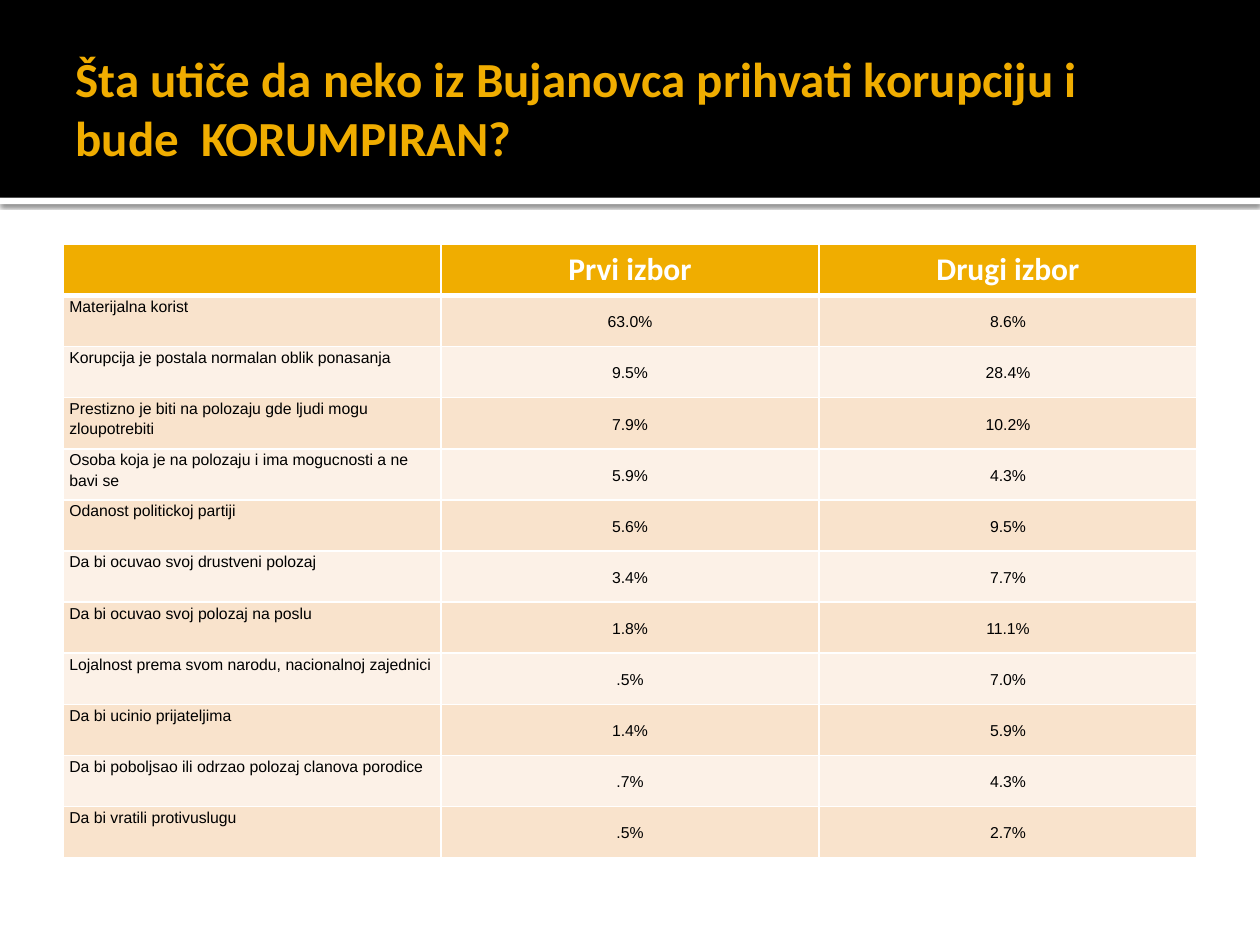
from lxml.etree import SubElement
from pptx import Presentation
from pptx.dml.color import RGBColor
from pptx.enum.shapes import MSO_SHAPE
from pptx.enum.text import MSO_ANCHOR, PP_ALIGN
from pptx.oxml.ns import qn
from pptx.util import Inches, Pt

COLORS = {
    "black": "000000",
    "white": "FFFFFF",
    "gold": "F0AD00",
    "dark_row": "F9E3CC",
    "light_row": "FCF1E7",
}

TITLE = "Šta utiče da neko iz Bujanovca prihvati korupciju i bude  KORUMPIRAN?"
HEADER = ("", "Prvi izbor", "Drugi izbor")
REASONS = [
    ("Materijalna korist", "63.0%", "8.6%"),
    ("Korupcija je postala normalan oblik ponasanja", "9.5%", "28.4%"),
    ("Prestizno je biti na polozaju gde ljudi mogu zloupotrebiti", "7.9%", "10.2%"),
    ("Osoba koja je na polozaju i ima mogucnosti a ne bavi se", "5.9%", "4.3%"),
    ("Odanost politickoj partiji", "5.6%", "9.5%"),
    ("Da bi ocuvao svoj drustveni polozaj", "3.4%", "7.7%"),
    ("Da bi ocuvao svoj polozaj na poslu", "1.8%", "11.1%"),
    ("Lojalnost prema svom narodu, nacionalnoj zajednici", ".5%", "7.0%"),
    ("Da bi ucinio prijateljima", "1.4%", "5.9%"),
    ("Da bi poboljsao ili odrzao polozaj clanova porodice", ".7%", "4.3%"),
    ("Da bi vratili protivuslugu", ".5%", "2.7%"),
]


def rgb(name):
    return RGBColor.from_string(COLORS[name])


class SlideBuilder:
    def __init__(self, slide, heading_font, body_font):
        self.slide = slide
        self.heading_font = heading_font
        self.body_font = body_font

    def style(self, paragraph, font_name, size, color, bold=False):
        font = paragraph.font
        font.name, font.size, font.bold = font_name, Pt(size), bold
        font.color.rgb = rgb(color)

    def band(self, top, height, color):
        """Add a full-width strip without outline or shadow."""
        strip = self.slide.shapes.add_shape(
            MSO_SHAPE.RECTANGLE, 0, Inches(top), Inches(10), Inches(height))
        strip.fill.solid()
        strip.fill.fore_color.rgb = rgb(color)
        strip.line.fill.background()
        strip.shadow.inherit = False
        return strip

    def drop_shadow(self, strip):
        effects = strip.element.spPr.find(qn("a:effectLst"))
        shadow = SubElement(effects, qn("a:outerShdw"), blurRad=str(Pt(2.5)),
                            dist=str(Pt(0.8)), dir="5400000", rotWithShape="0")
        tint = SubElement(shadow, qn("a:srgbClr"), val=COLORS["black"])
        SubElement(tint, qn("a:alpha"), val="60000")

    def title(self, text):
        heading = self.slide.shapes.title
        heading.left, heading.top = Inches(0.5), Inches(0.17)
        heading.width, heading.height = Inches(9), Inches(1.37)
        frame = heading.text_frame
        frame.text = text
        frame.word_wrap = True
        frame.vertical_anchor = MSO_ANCHOR.MIDDLE
        frame.margin_left = Inches(0.1)
        frame.margin_top = frame.margin_right = frame.margin_bottom = Inches(0.05)
        frame.paragraphs[0].alignment = PP_ALIGN.LEFT
        self.style(frame.paragraphs[0], self.heading_font, 28, "gold", True)
        # The placeholder comes first in the tree; bring it above the bands.
        self.slide.shapes.element.append(heading.element)

    def borders(self, cell, top, bottom):
        """Draw white cell borders; top and bottom widths are in points."""
        properties = cell._tc.get_or_add_tcPr()
        for side, width in (("L", 1), ("R", 1), ("T", top), ("B", bottom)):
            line = SubElement(properties, qn(f"a:ln{side}"), w=str(Pt(width)))
            fill = SubElement(line, qn("a:solidFill"))
            SubElement(fill, qn("a:srgbClr"), val=COLORS["white"])

    def header_cell(self, cell, text):
        self.borders(cell, 1, 3)
        self.fill_cell(cell, text, "gold")
        paragraph = cell.text_frame.paragraphs[0]
        paragraph.alignment = PP_ALIGN.CENTER
        self.style(paragraph, self.heading_font, 18, "white", True)

    def body_cell(self, cell, text, row, is_value):
        self.borders(cell, 3 if row == 1 else 1, 1)
        self.fill_cell(cell, text, "dark_row" if row % 2 else "light_row")
        cell.margin_left = cell.margin_right = Inches(0.05)
        cell.margin_top = cell.margin_bottom = 0
        paragraph = cell.text_frame.paragraphs[0]
        paragraph.line_spacing = 1.15
        if is_value:
            cell.vertical_anchor = MSO_ANCHOR.MIDDLE
            paragraph.alignment = PP_ALIGN.CENTER
        self.style(paragraph, self.body_font, 9, "black")

    def fill_cell(self, cell, text, color):
        cell.text = text
        cell.fill.solid()
        cell.fill.fore_color.rgb = rgb(color)

    def table(self, header, rows):
        grid = self.slide.shapes.add_table(
            len(rows) + 1, len(header),
            Inches(0.5), Inches(1.94), Inches(9), Inches(4.87)).table
        for column, text in enumerate(header):
            self.header_cell(grid.cell(0, column), text)
        for row, values in enumerate(rows, start=1):
            for column, text in enumerate(values):
                self.body_cell(grid.cell(row, column), text, row, column > 0)


def main():
    presentation = Presentation()
    presentation.slide_width, presentation.slide_height = Inches(10), Inches(7.5)
    slide = presentation.slides.add_slide(presentation.slide_layouts[5])
    builder = SlideBuilder(slide, "Calibri", "Arial")
    builder.drop_shadow(builder.band(1.57, 0.05, "white"))
    builder.band(0, 1.57, "black")
    builder.title(TITLE)
    builder.table(HEADER, REASONS)
    presentation.save("out.pptx")


if __name__ == "__main__":
    main()
